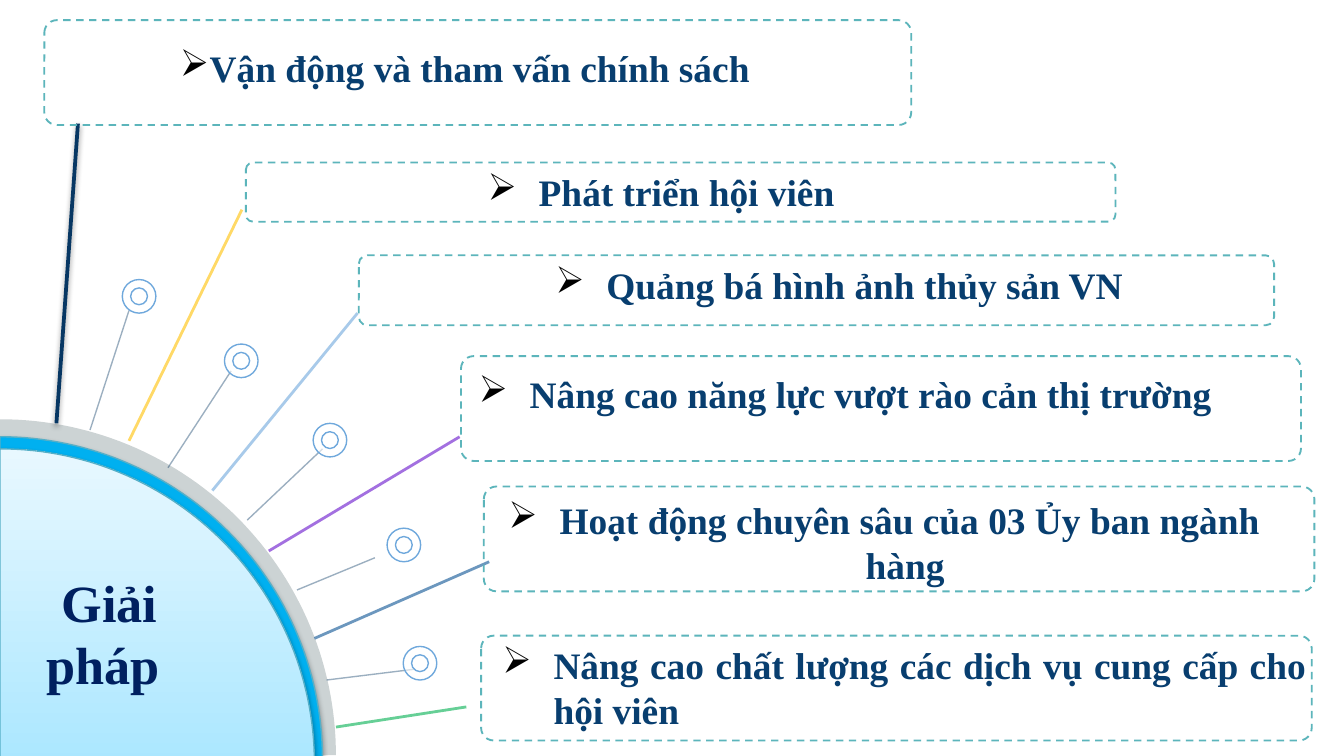
from math import cos, sin, pi
from pptx import Presentation
from pptx.dml.color import RGBColor
from pptx.enum.dml import MSO_LINE
from pptx.enum.shapes import MSO_CONNECTOR, MSO_SHAPE
from pptx.enum.text import MSO_ANCHOR, MSO_AUTO_SIZE, PP_ALIGN
from pptx.oxml.ns import qn
from pptx.util import Inches, Pt
from lxml.etree import SubElement

FONT = "Times New Roman"
WIDTH = 10
HEIGHT = WIDTH * 9 / 16
HEX = {
    "white": "FFFFFF", "black": "000000", "text": "083E6F", "title": "002060",
    "frame": "5CB5BB", "rim": "00232A", "band": "00B0F0", "edge": "55AFC7",
    "low": "ABE7FF", "high": "E8F8FF", "navy": "073763", "sky": "6FA8DC",
    "gold": "FFC000", "violet": "6611CC", "blue": "0B5394", "green": "00B050",
}

# Frame box, text box, alignment, hanging indent, wording
ITEMS = [
    ((0.33, 0.15, 6.45, 0.78), (0.42, 0.29, 6.08, 0.44), PP_ALIGN.CENTER, 0.19,
     "Vận động và tham vấn chính sách"),
    ((1.83, 1.21, 6.47, 0.44), (1.67, 1.21, 6.5, 0.44), PP_ALIGN.CENTER, 0.38,
     "Phát triển hội viên"),
    ((2.67, 1.9, 6.81, 0.52), (2.67, 1.9, 7.15, 0.44), PP_ALIGN.CENTER, 0.38,
     "Quảng bá hình ảnh thủy sản VN"),
    ((3.43, 2.65, 6.25, 0.78), (3.25, 2.71, 6.08, 0.44), PP_ALIGN.CENTER, 0.38,
     "Nâng cao năng lực vượt rào cản thị trường"),
    ((3.6, 3.62, 6.18, 0.78), (3.58, 3.65, 6, 1.11), PP_ALIGN.CENTER, 0.38,
     "Hoạt động chuyên sâu của 03 Ủy ban ngành hàng "),
    ((3.58, 4.73, 6.18, 0.78), (3.64, 4.73, 6.18, 0.77), PP_ALIGN.JUSTIFY, 0.38,
     "Nâng cao chất lượng các dịch vụ cung cấp cho hội viên"),
]

# Spokes that lead to the frames
SPOKES = [
    ((1.8, 1.56), (0.96, 3.28), "gold"),
    ((2.66, 2.33), (1.58, 3.65), "sky"),
    ((3.42, 3.25), (2, 4.1), "violet"),
    ((3.64, 4.18), (2.34, 4.75), "blue"),
    ((3.47, 5.26), (2.5, 5.41), "green"),
]

# Thin stems, each with the corner of its ring
STEMS = [
    ((0.96, 2.31), (0.67, 3.2), (0.91, 2.08)),
    ((1.72, 2.76), (1.25, 3.48), (1.67, 2.56)),
    ((2.4, 3.34), (1.84, 3.87), (2.33, 3.15)),
    ((2.79, 4.15), (2.21, 4.39), (2.88, 3.93)),
    ((3.08, 4.98), (2.43, 5.06), (3, 4.81)),
]


def color(name):
    return RGBColor.from_string(HEX[name])


def inch(nums):
    return [Inches(n) for n in nums]


def fade(shape, pct):
    """Make every colour set so far on the shape partly clear."""
    for node in shape._element.spPr.iter(qn("a:srgbClr")):
        SubElement(node, qn("a:alpha"), val=str(pct * 1000))


def shade(effects):
    """Add a soft drop shadow to an effect list."""
    drop = SubElement(effects, qn("a:outerShdw"), blurRad=str(Pt(3.1)),
                      dist=str(Pt(1.6)), dir="5400000", rotWithShape="0")
    tint = SubElement(drop, qn("a:srgbClr"), val=HEX["black"])
    SubElement(tint, qn("a:alpha"), val="38000")


def stroke(shape, name, width):
    shape.line.color.rgb = color(name)
    shape.line.width = Pt(width)


def add_fan(slide, top, size):
    """Quarter disc whose centre lies on the left edge of the slide."""
    steps = 60
    turns = [pi / 2 * i / steps for i in range(steps + 1)]
    dots = [inch((size * sin(t), top + size * (1 - cos(t)))) for t in turns]
    pen = slide.shapes.build_freeform(*dots[0], scale=1.0)
    pen.add_line_segments(dots[1:] + [inch((0, top + size))], close=True)
    fan = pen.convert_to_shape()
    fan.shadow.inherit = False
    return fan


def add_hub(slide):
    rim = add_fan(slide, 3.12, 2.5)
    rim.fill.solid()
    rim.fill.fore_color.rgb = color("rim")
    fade(rim, 20)
    rim.line.fill.background()

    band = add_fan(slide, 3.25, 2.4)
    band.fill.solid()
    band.fill.fore_color.rgb = color("band")

    core = add_fan(slide, 3.34, 2.34)
    core.fill.gradient()
    core.fill.gradient_angle = 90
    for stop, name, place in zip(core.fill.gradient_stops, ("low", "high"), (0, 1)):
        stop.color.rgb = color(name)
        stop.position = place

    for fan in (band, core):
        stroke(fan, "edge", 0.75)
        shade(fan._element.spPr.find(qn("a:effectLst")))


def add_line(slide, start, end, name, width, pct=100, shadow=False):
    line = slide.shapes.add_connector(MSO_CONNECTOR.STRAIGHT, *inch(start + end))
    stroke(line, name, width)
    if pct < 100:
        fade(line, pct)
    effects = SubElement(line._element.spPr, qn("a:effectLst"))
    if shadow:
        shade(effects)


def add_ring(slide, spot):
    ring = slide.shapes.add_shape(MSO_SHAPE.DONUT, *inch(spot + (0.25, 0.25)))
    ring.shadow.inherit = False
    ring.fill.solid()
    ring.fill.fore_color.rgb = color("white")
    fade(ring, 60)
    stroke(ring, "sky", 0.75)


def add_frame(slide, box):
    frame = slide.shapes.add_shape(MSO_SHAPE.ROUNDED_RECTANGLE, *inch(box))
    frame.adjustments[0] = 0.12
    frame.shadow.inherit = False
    frame.fill.background()
    stroke(frame, "frame", 1)
    frame.line.dash_style = MSO_LINE.DASH


def write(para, text, size, name):
    run = para.add_run()
    run.text = text
    run.font.name = FONT
    run.font.size = Pt(size)
    run.font.bold = True
    run.font.color.rgb = color(name)


def add_bullet(para, indent):
    props = para._p.get_or_add_pPr()
    props.set("marL", str(Inches(indent)))
    props.set("indent", str(-Inches(indent)))
    tint = SubElement(props, qn("a:buClr"))
    SubElement(tint, qn("a:srgbClr"), val=HEX["black"])
    SubElement(props, qn("a:buChar"), char="➢")


def add_item(slide, box, align, indent, text):
    frame = slide.shapes.add_textbox(*inch(box)).text_frame
    frame.word_wrap = True
    para = frame.paragraphs[0]
    para.alignment = align
    add_bullet(para, indent)
    write(para, text, 20, "text")


def set_title(slide, box, text):
    title = slide.shapes.title
    title.left, title.top, title.width, title.height = inch(box)
    frame = title.text_frame
    frame.word_wrap = True
    frame.auto_size = MSO_AUTO_SIZE.NONE
    frame.vertical_anchor = MSO_ANCHOR.TOP
    para = frame.paragraphs[0]
    para.alignment = PP_ALIGN.CENTER
    write(para, text, 28, "title")
    # Bring the title in front of the hub
    slide.shapes._spTree.append(title._element)


def main():
    deck = Presentation()
    deck.slide_width, deck.slide_height = inch((WIDTH, HEIGHT))
    slide = deck.slides.add_slide(deck.slide_layouts[5])

    # Hub and its rays
    add_hub(slide)
    for start, end, name in SPOKES:
        add_line(slide, start, end, name, 1.5, 60)
    for start, end, spot in STEMS:
        add_line(slide, start, end, "navy", 0.75, 40)
        add_ring(slide, spot)
    add_line(slide, (0.58, 0.92), (0.42, 3.15), "navy", 2, shadow=True)

    # Framed solutions
    for box, area, align, indent, text in ITEMS:
        add_frame(slide, box)
        add_item(slide, area, align, indent, text)

    set_title(slide, (-0.08, 4.19, 1.79, 1.04), "Giải pháp ")
    deck.save("out.pptx")


if __name__ == "__main__":
    main()
